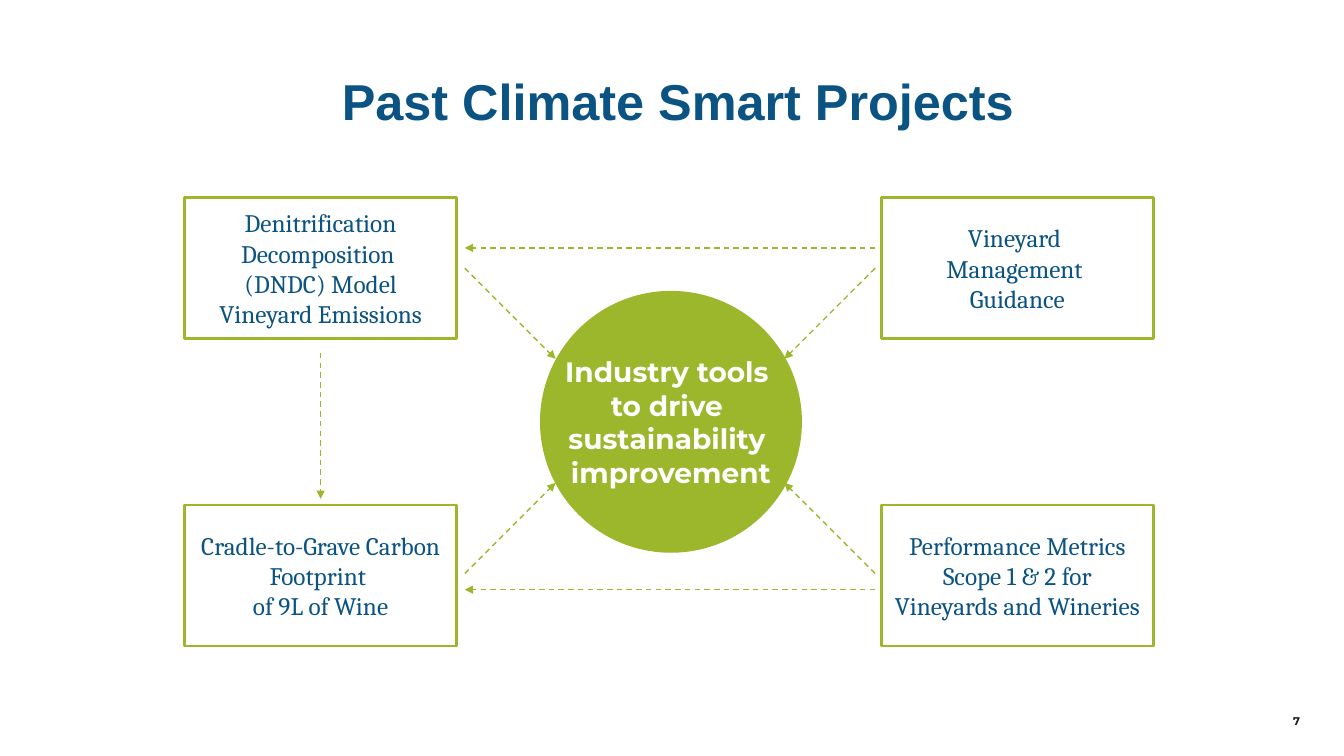
from dataclasses import dataclass
from itertools import product

from lxml import etree
from pptx import Presentation
from pptx import util as u
from pptx.dml.color import RGBColor
from pptx.enum import dml, shapes, text
from pptx.oxml.ns import qn

COLORS = {"blue": "0B5382", "green": "9DB72D", "white": "FFFFFF", "ink": "191D17"}

# Box grid and arrow ends
LEFT_X, RIGHT_X = 1.83, 8.74
TOP_Y, BOTTOM_Y = 1.96, 5.01
BOX_W, BOX_H = 2.7, 1.4
ARROW_LEFT, ARROW_RIGHT = 4.61, 8.68


@dataclass
class Node:
    """A labelled shape; \\n starts a paragraph and \\v breaks a line."""
    label: str
    left: float
    top: float
    width: float = BOX_W
    height: float = BOX_H
    shape: shapes.MSO_SHAPE = shapes.MSO_SHAPE.RECTANGLE
    fill: str = "white"
    ink: str = "blue"
    font: str = "Cambria"
    size: float = 18
    bold: bool = False
    wrap: bool = True


@dataclass
class Arrow:
    x1: float
    y1: float
    x2: float
    y2: float


def color(name: str) -> RGBColor:
    return RGBColor.from_string(COLORS[name])


def write(frame, label: str, font: str, size: float, ink: str, bold: bool) -> None:
    frame.text = label
    frame.vertical_anchor = text.MSO_ANCHOR.MIDDLE
    for para in frame.paragraphs:
        para.alignment = text.PP_ALIGN.CENTER
        for span in para.runs:
            span.font.name = font
            span.font.size = u.Pt(size)
            span.font.bold = bold
            span.font.color.rgb = color(ink)


def draw_node(page, node: Node) -> None:
    box = page.shapes.add_shape(node.shape, u.Inches(node.left), u.Inches(node.top),
                                u.Inches(node.width), u.Inches(node.height))
    box.shadow.inherit = False
    box.fill.solid()
    box.fill.fore_color.rgb = color(node.fill)
    box.line.color.rgb = color("green")
    box.line.width = u.Pt(2)
    write(box.text_frame, node.label, node.font, node.size, node.ink, node.bold)
    box.text_frame.word_wrap = node.wrap


def draw_arrow(page, arrow: Arrow) -> None:
    line = page.shapes.add_connector(
        shapes.MSO_CONNECTOR.STRAIGHT, u.Inches(arrow.x1), u.Inches(arrow.y1),
        u.Inches(arrow.x2), u.Inches(arrow.y2))
    line.line.color.rgb = color("green")
    line.line.width = u.Pt(1)
    line.line.dash_style = dml.MSO_LINE.DASH
    properties = line.element.spPr
    etree.SubElement(properties.find(qn("a:ln")), qn("a:tailEnd"), type="triangle")
    etree.SubElement(properties, qn("a:effectLst"))


NODES = [
    Node("Performance Metrics\nScope 1 & 2 for Vineyards and Wineries", RIGHT_X, BOTTOM_Y),
    Node("Denitrification Decomposition \v(DNDC) Model\nVineyard Emissions", LEFT_X, TOP_Y),
    Node("Vineyard \vManagement \nGuidance", RIGHT_X, TOP_Y),
    Node("Cradle-to-Grave Carbon Footprint \vof 9L of Wine", LEFT_X, BOTTOM_Y),
    Node("Industry tools \vto drive \nsustainability \nimprovement", 5.37, 2.9, 2.57, 2.57,
         shapes.MSO_SHAPE.OVAL, "green", "white", "Montserrat", 20, True, False),
]

# Diagonals point from each box to the circle
DIAGONALS = [
    Arrow(x1, y1, x2, y2)
    for (x1, x2), (y1, y2) in product([(ARROW_LEFT, 5.51), (ARROW_RIGHT, 7.78)],
                                      [(2.66, 3.56), (5.69, 4.79)])
]
# Flows between boxes
FLOWS = [Arrow(ARROW_RIGHT, y, ARROW_LEFT, y) for y in (2.46, 5.85)]
FLOWS.append(Arrow(3.18, 3.5, 3.18, 4.95))


def main() -> None:
    deck = Presentation()
    deck.slide_width, deck.slide_height = u.Inches(13.33), u.Inches(7.5)
    page = deck.slides.add_slide(deck.slide_layouts[5])

    # Title
    title = page.shapes.title
    title.left, title.top = u.Inches(0.38), u.Inches(0.61)
    title.width, title.height = u.Inches(12.69), u.Inches(0.78)
    write(title.text_frame, "Past Climate Smart Projects", "Arial", 36, "blue", True)
    title.text_frame.auto_size = text.MSO_AUTO_SIZE.NONE

    # Diagram
    for arrow in DIAGONALS + FLOWS:
        draw_arrow(page, arrow)
    for node in NODES:
        draw_node(page, node)

    # Page number
    number = page.shapes.add_textbox(u.Inches(12.66), u.Inches(6.98),
                                     u.Inches(0.4), u.Inches(0.34))
    write(number.text_frame, "7", "Montserrat", 8, "ink", True)
    number.text_frame.word_wrap = True

    deck.save("out.pptx")


if __name__ == "__main__":
    main()
